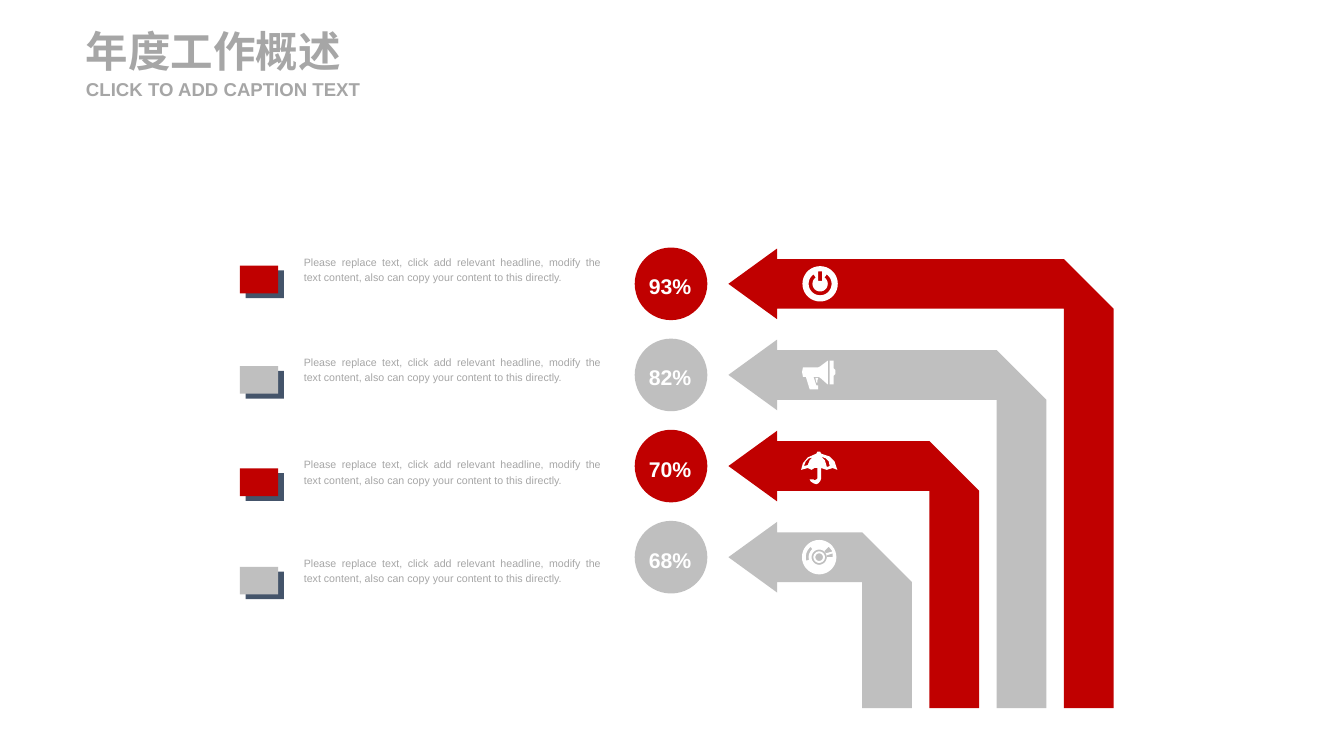
from dataclasses import dataclass
from math import cos, radians, sin

from pptx import Presentation
from pptx.dml.color import RGBColor
from pptx.enum.shapes import MSO_SHAPE as Shape
from pptx.enum.text import MSO_ANCHOR as Anchor, MSO_AUTO_SIZE as AutoSize, PP_ALIGN as Align
from pptx.util import Inches, Pt


@dataclass(frozen=True)
class Theme:
    font: str = "Arial"
    red: str = "C00000"
    silver: str = "BFBFBF"
    navy: str = "44546A"
    gray: str = "A6A6A6"
    white: str = "FFFFFF"
    title: int = 32
    percent: int = 16
    caption: int = 14
    body: int = 8


class SlideBuilder:
    def __init__(self, slide, theme):
        self.slide = slide
        self.theme = theme

    def paint(self, shape, color):
        shape.shadow.inherit = False
        shape.fill.solid()
        shape.fill.fore_color.rgb = RGBColor.from_string(color)
        shape.line.fill.background()

    def preset(self, kind, left, top, width, height, color):
        shape = self.slide.shapes.add_shape(
            kind, Inches(left), Inches(top), Inches(width), Inches(height))
        self.paint(shape, color)

    def outline(self, contours, color, origin_x=0, origin_y=0):
        """Draw closed contours as one shape; inner contours become holes."""
        placed = [[(Inches(origin_x + x), Inches(origin_y + y)) for x, y in contour]
                  for contour in contours]
        builder = self.slide.shapes.build_freeform(*placed[0][0])
        for index, contour in enumerate(placed):
            if index:
                builder.move_to(*contour[0])
            builder.add_line_segments(contour[1:], close=True)
        self.paint(builder.convert_to_shape(), color)

    def text(self, words, left, top, width, height, size, color, bold=False,
             wrap=True, heading=False):
        box = self.slide.shapes.add_textbox(
            Inches(left), Inches(top), Inches(width), Inches(height))
        frame = box.text_frame
        frame.text = words
        frame.word_wrap = wrap
        frame.auto_size = AutoSize.SHAPE_TO_FIT_TEXT
        paragraph = frame.paragraphs[0]
        if heading:
            frame.vertical_anchor = Anchor.MIDDLE
            frame.margin_left = frame.margin_right = 0
            frame.margin_top = frame.margin_bottom = 0
        else:
            paragraph.alignment = Align.JUSTIFY
            paragraph.line_spacing = 1.2
        font = paragraph.runs[0].font
        font.name = self.theme.font
        font.size = Pt(size)
        font.bold = bold
        font.color.rgb = RGBColor.from_string(color)

    def bent_arrow(self, middle, right, color):
        tip, neck, bottom = 7.62, 8.13, 7.41
        half_head, half_shaft = 0.37, 0.26
        inner = right - 2 * half_shaft
        self.outline([[
            (tip, middle), (neck, middle - half_head), (neck, middle - half_shaft),
            (inner, middle - half_shaft), (right, middle + half_shaft),
            (right, bottom), (inner, bottom), (inner, middle + half_shaft),
            (neck, middle + half_shaft), (neck, middle + half_head),
        ]], color)


def arc(radius, start=0, end=360, center_x=0.0):
    """Points along an arc, angles clockwise from the right."""
    steps = 36
    angles = [radians(start + (end - start) * step / steps) for step in range(steps + 1)]
    return [(center_x + radius * cos(angle), radius * sin(angle)) for angle in angles]


# Icon contours, in inches from the icon's middle
POWER = [
    arc(0.185),
    [(-0.02, -0.13), (0.02, -0.13), (0.02, -0.03), (-0.02, -0.03)],
    arc(0.12, -55, 235) + arc(0.08, 235, -55),
]
MEGAPHONE = [
    [(-0.18, -0.08), (-0.02, -0.08), (0, -0.09), (0.08, -0.15), (0.08, 0.1),
     (0, 0.03), (-0.02, 0.02), (-0.07, 0.02), (-0.04, 0.11), (-0.02, 0.11),
     (-0.02, 0.15), (-0.11, 0.15), (-0.15, 0.02), (-0.18, 0.02), (-0.19, -0.03)],
    [(0.1, -0.15), (0.14, -0.15), (0.14, -0.07), (0.16, -0.05), (0.16, -0.01),
     (0.14, 0.01), (0.14, 0.1), (0.1, 0.1)],
    [(-0.02, 0.03), (-0.05, 0.03), (-0.04, 0.08), (-0.03, 0.08), (-0.03, 0.06)],
]
UMBRELLA = [
    [(-0.2, 0.04), (-0.18, -0.03), (-0.13, -0.09), (-0.04, -0.13), (-0.03, -0.15),
     (0, -0.15), (0.01, -0.13), (0.1, -0.1), (0.15, -0.05), (0.18, 0.04),
     (0.13, 0.02), (0.07, 0.04), (0.04, 0.03), (0.01, 0.02), (0.01, 0.13),
     (0, 0.16), (-0.02, 0.18), (-0.04, 0.19), (-0.07, 0.18), (-0.1, 0.16),
     (-0.11, 0.14), (-0.07, 0.14), (-0.06, 0.15), (-0.04, 0.14), (-0.03, 0.13),
     (-0.03, 0.02), (-0.06, 0.02), (-0.09, 0.04), (-0.13, 0.02)],
    [(0.07, 0.01), (0.1, 0), (0.09, -0.05), (0.06, -0.08), (0.01, -0.1), (0.05, -0.06)],
    [(-0.17, 0), (-0.13, -0.01), (-0.11, -0.06), (-0.08, -0.09), (-0.12, -0.08),
     (-0.15, -0.05)],
]
DISC = [arc(radius, center_x=-0.01) for radius in (0.18, 0.08, 0.06, 0.04)] + [
    arc(0.14, 165, 230, -0.01) + arc(0.11, 230, 165, -0.01),
    [(0.04, -0.06), (0.06, -0.04), (0.13, -0.06), (0.09, -0.11)],
    [(0.07, -0.02), (0.07, 0), (0.13, 0), (0.13, -0.04)],
]

BODY = ("Please replace text, click add relevant headline, modify the text content, "
        "also can copy your content to this directly.")
# Percentage, icon, top of the legend marker
ROWS = [("93%", POWER, 2.78), ("82%", MEGAPHONE, 3.83),
        ("70%", UMBRELLA, 4.9), ("68%", DISC, 5.93)]
FIRST_MIDDLE, LAST_MIDDLE = 2.97, 5.83
FIRST_RIGHT, LAST_RIGHT = 11.65, 9.54
ICON_X = 8.58


def main():
    presentation = Presentation()
    presentation.slide_width = Inches(14.06)
    presentation.slide_height = Inches(7.91)
    theme = Theme()
    builder = SlideBuilder(
        presentation.slides.add_slide(presentation.slide_layouts[6]), theme)

    # Heading
    builder.text("年度工作概述", 0.9, 0.26, 3.07, 0.54, theme.title, theme.gray,
                 bold=True, heading=True)
    builder.text("CLICK TO ADD CAPTION TEXT", 0.9, 0.81, 3.07, 0.24, theme.caption,
                 theme.gray, bold=True, heading=True)

    for index, (percent, icon, marker_top) in enumerate(ROWS):
        color = (theme.red, theme.silver)[index % 2]
        share = index / (len(ROWS) - 1)
        middle = FIRST_MIDDLE + share * (LAST_MIDDLE - FIRST_MIDDLE)
        right = FIRST_RIGHT + share * (LAST_RIGHT - FIRST_RIGHT)

        # Percentage badge
        builder.preset(Shape.OVAL, 6.64, middle - 0.38, 0.76, 0.76, color)
        builder.text(percent, 6.69, middle - 0.21, 0.65, 0.42, theme.percent,
                     theme.white, bold=True, wrap=False)

        # Arrow with icon
        builder.bent_arrow(middle, right, color)
        builder.outline(icon, theme.white, ICON_X, middle)

        # Legend marker and description
        builder.preset(Shape.RECTANGLE, 2.57, marker_top + 0.05, 0.4, 0.29, theme.navy)
        builder.preset(Shape.RECTANGLE, 2.51, marker_top, 0.4, 0.29, color)
        builder.text(BODY, 3.08, marker_top - 0.18, 3.31, 0.41, theme.body, theme.gray)

    presentation.save("out.pptx")


if __name__ == "__main__":
    main()
